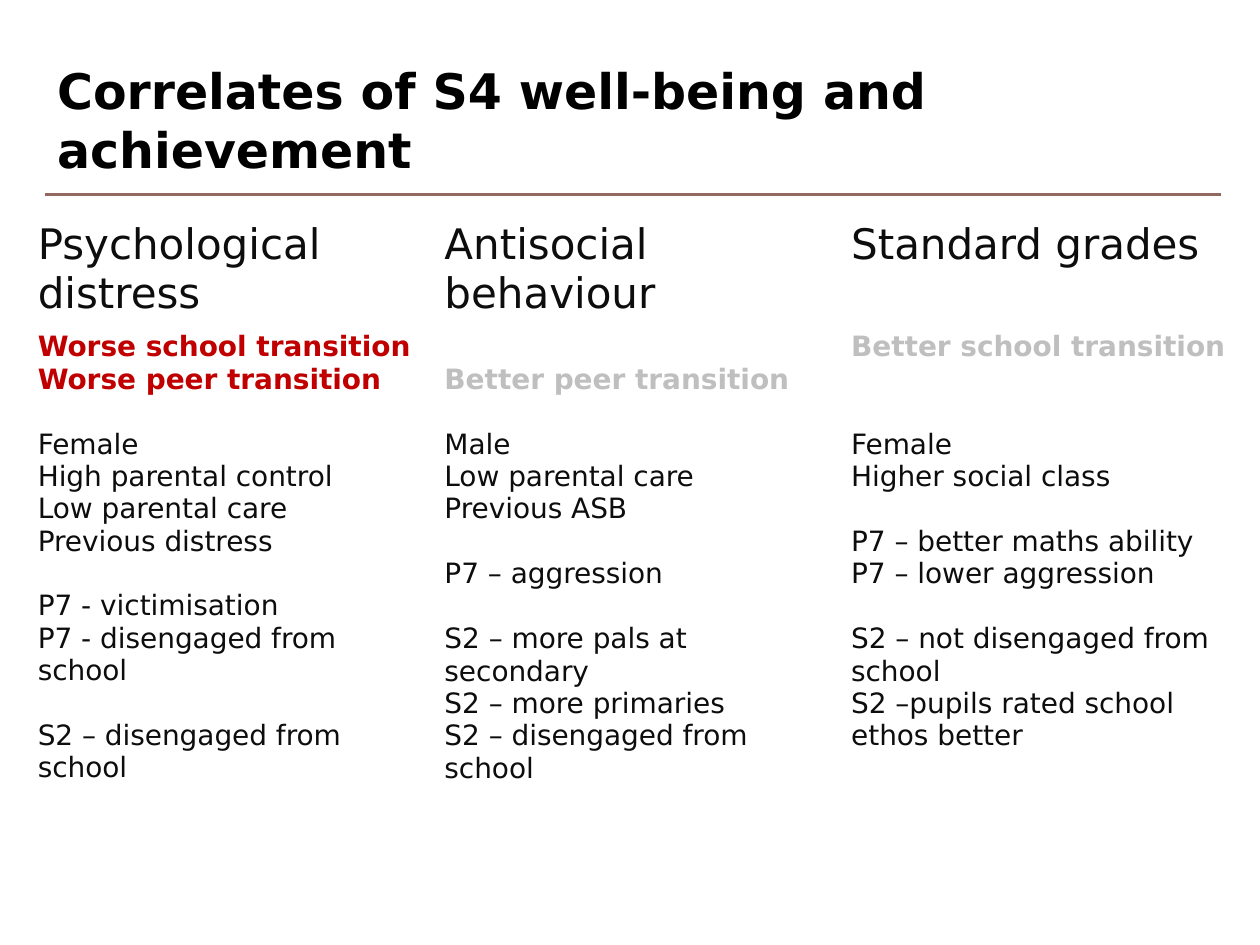
from lxml.etree import SubElement
from pptx import Presentation
from pptx.dml.color import RGBColor
from pptx.enum.shapes import MSO_CONNECTOR
from pptx.enum.text import MSO_ANCHOR, MSO_AUTO_SIZE, PP_ALIGN
from pptx.oxml.ns import qn
from pptx.util import Pt

FONT = "DejaVu Sans"
INK, WHITE, RULE = "0D0D0D", "FFFFFF", "91695F"
WORSE, BETTER = "C00000", "BFBFBF"
BODY_SIZE = 16
LINE_HEIGHT = 18.6  # one line of body text
CELL_MARGIN = 3.6

# Per outcome: heading, colour of transition lines, lines left free above,
# transition lines, lines left free below, groups of further correlates.
OUTCOMES = [
    ("Psychological distress", WORSE, 0,
     ["Worse school transition", "Worse peer transition"], 1,
     [["Female", "High parental control", "Low parental care", "Previous distress"],
      ["P7 - victimisation", "P7 - disengaged from school"],
      ["S2 – disengaged from school"]]),
    ("Antisocial behaviour", BETTER, 1, ["Better peer transition"], 1,
     [["Male", "Low parental care", "Previous ASB"],
      ["P7 – aggression"],
      ["S2 – more pals at secondary", "S2 – more primaries",
       "S2 – disengaged from school"]]),
    ("Standard grades", BETTER, 0, ["Better school transition"], 2,
     [["Female", "Higher social class"],
      ["P7 – better maths ability", "P7 – lower aggression"],
      ["S2 – not disengaged from school", "S2 –pupils rated school ethos better"]]),
]


def colour(value):
    return RGBColor.from_string(value)


def write(para, text, size=BODY_SIZE, ink=INK, bold=False, before=0):
    para.alignment = PP_ALIGN.LEFT
    para.space_before = Pt(before)
    span = para.add_run()
    span.text = text
    span.font.name = FONT
    span.font.size = Pt(size)
    span.font.bold = bold
    span.font.color.rgb = colour(ink)


class Page:
    def __init__(self, deck):
        self.slide = deck.slides.add_slide(deck.slide_layouts[5])

    def rule(self, left, right, y):
        line = self.slide.shapes.add_connector(
            MSO_CONNECTOR.STRAIGHT, Pt(left), Pt(y), Pt(right), Pt(y))
        line.line.color.rgb = colour(RULE)
        line.line.width = Pt(1.75)
        SubElement(line._element.spPr, qn("a:effectLst"))

    def title(self, text, left, top, width, height):
        box = self.slide.shapes.title
        box.left, box.top, box.width, box.height = map(Pt, (left, top, width, height))
        frame = box.text_frame
        frame.word_wrap = True
        frame.auto_size = MSO_AUTO_SIZE.NONE
        frame.vertical_anchor = MSO_ANCHOR.MIDDLE
        write(frame.paragraphs[0], text, size=28, ink="000000", bold=True)

    def table(self, left, top, column_width, row_heights, columns):
        """Add a plain white table without header or band styling."""
        frame = self.slide.shapes.add_table(
            len(row_heights), columns, Pt(left), Pt(top),
            Pt(column_width * columns), Pt(sum(row_heights)))
        table = frame.table
        table.first_row = table.horz_banding = False
        for column in table.columns:
            column.width = Pt(column_width)
        for row, height in zip(table.rows, row_heights):
            row.height = Pt(height)
        for cell in table.iter_cells():
            cell.fill.solid()
            cell.fill.fore_color.rgb = colour(WHITE)
        return table

    def correlates(self, cell, ink, lines_above, transitions, lines_below, groups):
        cell.margin_top = Pt(CELL_MARGIN + lines_above * LINE_HEIGHT)
        frame = cell.text_frame
        for index, text in enumerate(transitions):
            para = frame.add_paragraph() if index else frame.paragraphs[0]
            write(para, text, ink=ink, bold=True)
        gap = lines_below * LINE_HEIGHT
        for group in groups:
            for text in group:
                write(frame.add_paragraph(), text, before=gap)
                gap = 0
            gap = LINE_HEIGHT


def main():
    deck = Presentation()
    deck.slide_width, deck.slide_height = Pt(720), Pt(540)
    page = Page(deck)
    page.rule(25.5, 697.5, 111.3)
    page.title("Correlates of S4 well-being and achievement", 25.5, 36, 672, 64)
    table = page.table(14.4, 122.4, 232.4, [57, 39.6, 39.6, 39.6], len(OUTCOMES))
    for column, (heading, *details) in enumerate(OUTCOMES):
        write(table.cell(0, column).text_frame.paragraphs[0], heading, size=24)
        page.correlates(table.cell(1, column), *details)
    deck.save("out.pptx")


if __name__ == "__main__":
    main()
